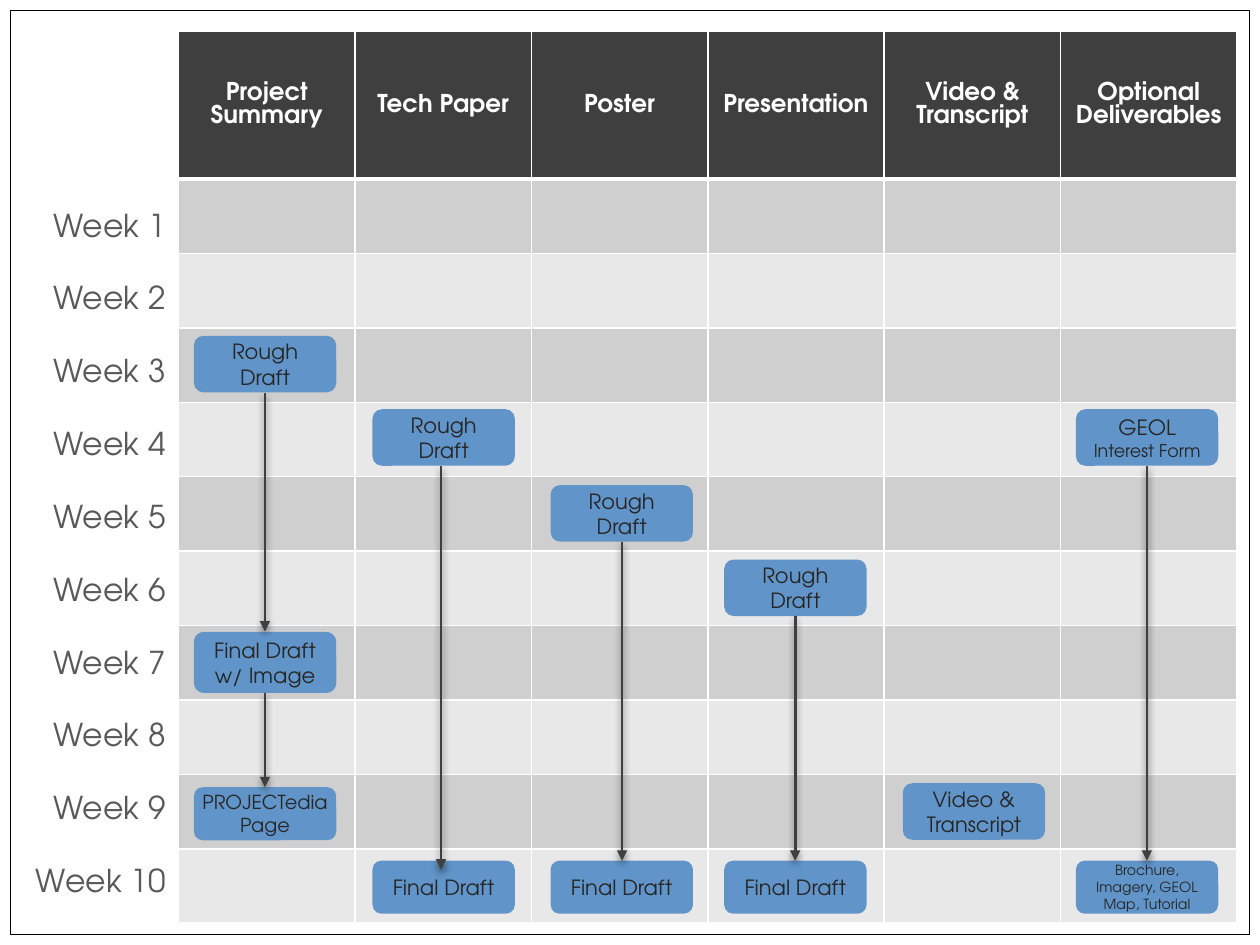
from lxml.etree import SubElement
from pptx import Presentation
from pptx.dml.color import RGBColor
from pptx.enum.shapes import MSO_CONNECTOR, MSO_SHAPE
from pptx.enum.text import MSO_ANCHOR, PP_ALIGN
from pptx.oxml import parse_xml
from pptx.oxml.ns import nsdecls, qn
from pptx.util import Cm, Pt

FONT = "TeX Gyre Adventor"
DARK, BLUE, WHITE = "3F3F3F", "6194C8", "FFFFFF"


def color(hex_string):
    return RGBColor.from_string(hex_string)


def add_run(paragraph, text, size, hex_string, bold=False):
    run = paragraph.add_run()
    run.text = text
    run.font.name = FONT
    run.font.size = Pt(size)
    run.font.bold = bold
    run.font.color.rgb = color(hex_string)


presentation = Presentation()
presentation.slide_width = Cm(25.4)
presentation.slide_height = Cm(19.05)
slide = presentation.slides.add_slide(presentation.slide_layouts[6])

# Page frame
frame = slide.shapes.add_shape(
    MSO_SHAPE.RECTANGLE, Cm(0.21), Cm(0.21), Cm(24.98), Cm(18.63))
frame.shadow.inherit = False
frame.fill.background()
frame.line.color.rgb = color("000000")
frame.line.width = Pt(0.75)

# Schedule table: one column per deliverable, one row per week
headers = ["Project Summary", "Tech Paper", "Poster", "Presentation",
           "Video & Transcript", "Optional Deliverables"]
weeks = 10
table = slide.shapes.add_table(
    weeks + 1, len(headers), Cm(3.6), Cm(0.64), Cm(21.34), Cm(17.98)).table
for column in table.columns:
    column.width = Cm(21.34 / len(headers))
for row_index, row in enumerate(table.rows):
    row.height = Cm(1.5) if row_index else Cm(2.97)
    for column_index, cell in enumerate(row.cells):
        cell.fill.solid()
        if row_index == 0:
            fill = DARK
            cell.vertical_anchor = MSO_ANCHOR.MIDDLE
            paragraph = cell.text_frame.paragraphs[0]
            paragraph.alignment = PP_ALIGN.CENTER
            add_run(paragraph, headers[column_index], 14, WHITE, bold=True)
        else:
            fill = "CFCFCF" if row_index % 2 else "E8E8E8"
        cell.fill.fore_color.rgb = color(fill)

        thick_side = {0: "B", 1: "T"}.get(row_index)
        properties = cell._tc.get_or_add_tcPr()
        for position, side in enumerate("LRTB"):
            width = Pt(3 if side == thick_side else 1)
            properties.insert(position, parse_xml(
                f'<a:ln{side} {nsdecls("a")} w="{width}"><a:solidFill>'
                f'<a:srgbClr val="{WHITE}"/></a:solidFill></a:ln{side}>'))

# Week labels
labels = slide.shapes.add_textbox(Cm(0.41), Cm(4.02), Cm(3.18), Cm(14.35)).text_frame
labels.word_wrap = False
for week in range(1, weeks + 1):
    paragraph = labels.paragraphs[0] if week == 1 else labels.add_paragraph()
    paragraph.alignment = PP_ALIGN.RIGHT
    paragraph.space_after = Pt(20)
    add_run(paragraph, f"Week {week}", 18, "595959")

# Milestones: left, top, height, runs of (text, size)
summary, paper, poster, talk, video, optional = 3.91, 7.51, 11.1, 14.6, 18.2, 21.69
rough = [("Rough Draft", 12)]
final = [("Final Draft", 12)]
milestones = [
    (summary, 6.77, 1.14, rough),
    (summary, 12.74, 1.23, [("Final Draft w/ Image", 12)]),
    (summary, 15.87, 1.07, [("PROJECTedia Page", 11)]),
    (paper, 8.25, 1.14, rough),
    (paper, 17.35, 1.07, final),
    (poster, 9.78, 1.14, rough),
    (poster, 17.35, 1.07, final),
    (talk, 11.28, 1.14, rough),
    (talk, 17.35, 1.07, final),
    (video, 15.79, 1.14, [("Video & Transcript", 12)]),
    (optional, 8.25, 1.14, [("GEOL ", 12), ("Interest Form", 10)]),
    (optional, 17.35, 1.07, [("Brochure, Imagery, GEOL Map, Tutorial", 8)]),
]
for left, top, height, runs in milestones:
    box = slide.shapes.add_shape(
        MSO_SHAPE.ROUNDED_RECTANGLE, Cm(left), Cm(top), Cm(2.87), Cm(height))
    box.shadow.inherit = False
    box.fill.solid()
    box.fill.fore_color.rgb = color(BLUE)
    box.line.fill.background()
    text_frame = box.text_frame
    text_frame.word_wrap = True
    text_frame.vertical_anchor = MSO_ANCHOR.MIDDLE
    if runs[0][1] == 11:
        text_frame.margin_left = text_frame.margin_right = 0
    paragraph = text_frame.paragraphs[0]
    paragraph.alignment = PP_ALIGN.CENTER
    for text, size in runs:
        add_run(paragraph, text, size, "262626")

# Arrows from draft to draft: x, start, end
arrows = [
    (5.34, 7.92, 12.73),
    (5.34, 13.97, 15.87),
    (8.89, 9.4, 17.53),
    (12.54, 10.92, 17.35),
    (16.03, 12.42, 17.35),
    (23.12, 9.4, 17.35),
]
for x, start, end in arrows:
    arrow = slide.shapes.add_connector(
        MSO_CONNECTOR.STRAIGHT, Cm(x), Cm(start), Cm(x), Cm(end))
    arrow.line.color.rgb = color(DARK)
    arrow.line.width = Pt(1.57)
    SubElement(arrow.line._get_or_add_ln(), qn("a:tailEnd"), type="triangle")
    arrow._element.spPr.append(parse_xml(
        f'<a:effectLst {nsdecls("a")}><a:outerShdw blurRad="{Pt(4)}" dist="{Pt(2)}" '
        'dir="5400000" rotWithShape="0"><a:srgbClr val="000000">'
        '<a:alpha val="45000"/></a:srgbClr></a:outerShdw></a:effectLst>'))

presentation.save("out.pptx")
